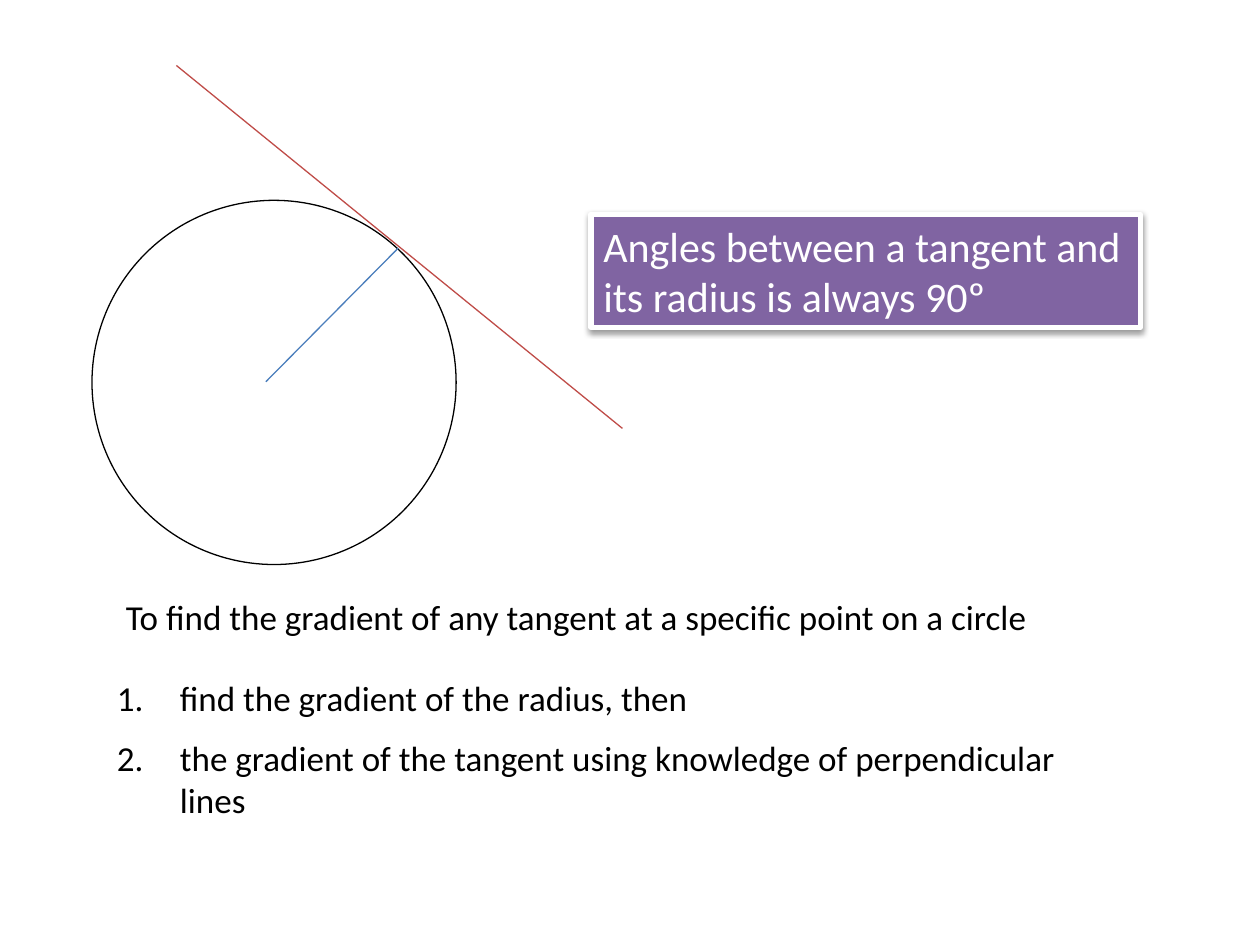
from dataclasses import dataclass

from lxml.etree import fromstring
from pptx import Presentation
from pptx.dml.color import RGBColor
from pptx.enum.shapes import MSO_CONNECTOR, MSO_SHAPE
from pptx.enum.text import MSO_ANCHOR, PP_ALIGN
from pptx.oxml import parse_xml
from pptx.oxml.ns import nsdecls
from pptx.util import Emu, Pt

PX = 9144  # 100 px to the inch


@dataclass(frozen=True)
class Theme:
    font: str = "Calibri"
    ink: str = "000000"
    paper: str = "FFFFFF"
    rule_fill: str = "8064A2"
    radius: str = "4B7EBC"
    tangent: str = "BF4C48"
    rule_size: int = 24
    body_size: int = 20
    thin: float = 0.75
    border: float = 3


theme = Theme()


def px(*lengths):
    return [Emu(length * PX) for length in lengths]


def write_text(shape, *texts, size=theme.body_size, color=theme.ink, numbered=False):
    """Fill a shape with one paragraph per text, numbered if asked."""
    frame = shape.text_frame
    frame.word_wrap = True
    frame.vertical_anchor = MSO_ANCHOR.TOP
    for index, text in enumerate(texts):
        para = frame.add_paragraph() if index else frame.paragraphs[0]
        para.alignment = PP_ALIGN.LEFT
        para.space_before = Pt(size / 2 if index else 0)
        span = para.add_run()
        span.text = text
        span.font.name = theme.font
        span.font.size = Pt(size)
        span.font.color.rgb = RGBColor.from_string(color)
        if numbered:
            properties = para._p.get_or_add_pPr()
            properties.set("marL", str(50 * PX))
            properties.set("indent", str(-50 * PX))
            properties.append(parse_xml(f'<a:buAutoNum {nsdecls("a")} type="arabicPeriod"/>'))


deck = Presentation()
deck.slide_width, deck.slide_height = px(1000, 750)
page = deck.slides.add_slide(deck.slide_layouts[6])
shapes = page.shapes

circle = shapes.add_shape(MSO_SHAPE.OVAL, *px(73, 159, 289, 289))
circle.shadow.inherit = False
circle.fill.background()
circle.line.color.rgb = RGBColor.from_string(theme.ink)
circle.line.width = Pt(theme.thin)

for ends, color in (
    ((211, 303, 316, 197), theme.radius),
    ((140, 52, 494, 340), theme.tangent),
):
    line = shapes.add_connector(MSO_CONNECTOR.STRAIGHT, *px(*ends))
    line.line.color.rgb = RGBColor.from_string(color)
    line.line.width = Pt(theme.thin)
    line._element.spPr.append(fromstring(f'<a:effectLst {nsdecls("a")}/>'))

rule_box = shapes.add_shape(MSO_SHAPE.RECTANGLE, *px(469, 170, 436, 90))
rule_box.fill.solid()
rule_box.fill.fore_color.rgb = RGBColor.from_string(theme.rule_fill)
rule_box.line.color.rgb = RGBColor.from_string(theme.paper)
rule_box.line.width = Pt(theme.border)
rule_box._element.spPr.append(parse_xml(
    f'<a:effectLst {nsdecls("a")}>'
    f'<a:outerShdw blurRad="{Pt(3.1)}" dist="{Pt(1.6)}" dir="5400000" rotWithShape="0">'
    f'<a:srgbClr val="{theme.ink}"><a:alpha val="38000"/></a:srgbClr>'
    '</a:outerShdw></a:effectLst>'
))
write_text(rule_box, "Angles between a tangent and its radius is always 90º",
           size=theme.rule_size, color=theme.paper)

write_text(shapes.add_textbox(*px(90, 468, 805, 44)),
           "To find the gradient of any tangent at a specific point on a circle")

write_text(shapes.add_textbox(*px(83, 532, 803, 128)),
           "find the gradient of the radius, then",
           "the gradient of the tangent using knowledge of perpendicular lines",
           numbered=True)

deck.save("out.pptx")
